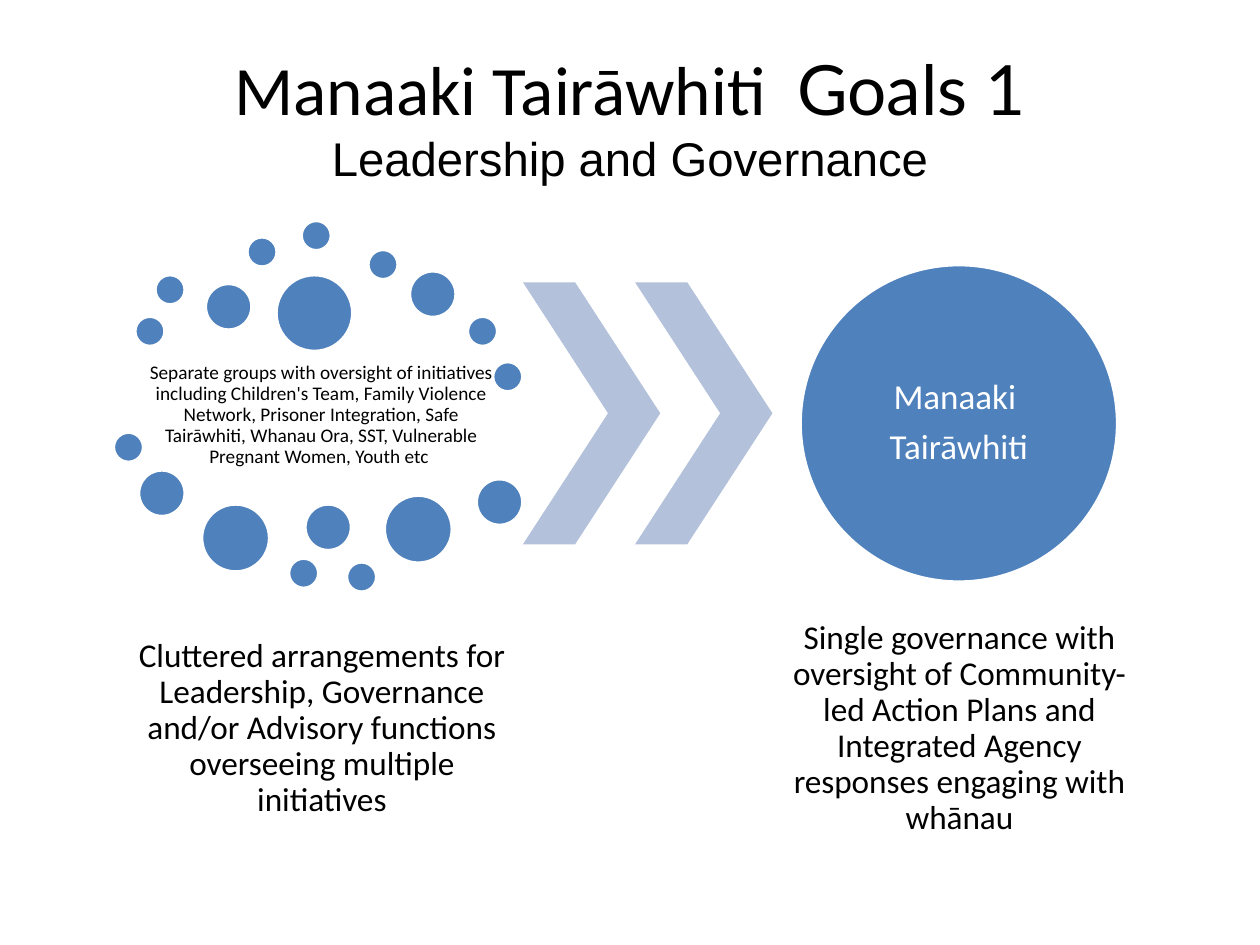
import pptx
from pptx.dml.color import RGBColor
from pptx.enum.shapes import MSO_SHAPE
from pptx.enum.text import MSO_ANCHOR, MSO_AUTO_SIZE, PP_ALIGN
from pptx.util import Inches, Pt

BLACK = RGBColor(0x00, 0x00, 0x00)
WHITE = RGBColor(0xFF, 0xFF, 0xFF)
BLUE = RGBColor(0x4F, 0x81, 0xBD)
PALE_BLUE = RGBColor(0xB3, 0xC1, 0xDB)

TITLE_RUNS = [
    ("Manaaki Tairāwhiti  ", "Calibri", 39.6),
    ("Goals 1", "Lato", 39.6),
    ("Leadership and Governance", "Arial", 27),
]

# Circle diameter: (left, top) of each circle
CIRCLES = {
    0.24: [(1.07, 2.51), (1.23, 2.18), (1.96, 1.88), (2.39, 1.75), (2.92, 1.98),
           (3.71, 2.51), (3.91, 2.87), (0.9, 3.43), (2.29, 4.43), (2.75, 4.46)],
    0.37: [(1.63, 2.25), (3.25, 2.15), (1.1, 3.73), (2.42, 4), (3.78, 3.8)],
    0.54: [(1.6, 4), (3.05, 3.93)],
    0.61: [(2.19, 2.18)],
    2.52: [(6.35, 2.1)],
}

CHEVRON_LEFTS = [4.15, 5.04]

# Paragraphs, (left, top, width, height), inset, size, colour
TEXTS = [
    (["Separate groups with oversight of initiatives including Children's Team, "
      "Family Violence Network, Prisoner Integration, Safe Tairāwhiti, Whanau Ora, "
      "SST, Vulnerable Pregnant Women, Youth etc "],
     (1.1, 2.75, 2.9, 1.09), 0.02, 11, BLACK),
    (["Cluttered arrangements for Leadership, Governance and/or Advisory functions "
      "overseeing multiple initiatives"],
     (1.07, 4.87, 2.97, 1.83), 0.03, 19, BLACK),
    (["Manaaki ", "Tairāwhiti"], (6.72, 2.47, 1.78, 1.78), 0, 20, WHITE),
    (["Single governance with oversight of Community-led Action Plans and "
      "Integrated Agency responses engaging with whānau"],
     (6.13, 4.87, 2.97, 1.83), 0.03, 19, BLACK),
]


def add_filled(s, kind, box, color):
    sp = s.shapes.add_shape(kind, *map(Inches, box))
    sp.shadow.inherit = False
    sp.fill.solid()
    sp.fill.fore_color.rgb = color
    sp.line.fill.background()
    return sp


def add_text(s, paragraphs, box, inset, size, color):
    tf = s.shapes.add_textbox(*map(Inches, box)).text_frame
    tf.word_wrap = True
    tf.vertical_anchor = MSO_ANCHOR.MIDDLE
    tf.margin_left = tf.margin_right = tf.margin_top = tf.margin_bottom = Inches(inset)
    tf.text = "\n".join(paragraphs)
    for p in tf.paragraphs:
        p.alignment = PP_ALIGN.CENTER
        p.line_spacing = 0.9
        p.space_after = Pt(0.35 * size)
        p.font.name = "Calibri"
        p.font.size = Pt(size)
        p.font.color.rgb = color


def fill_title(title):
    title.left, title.top, title.width, title.height = map(Inches, (0.5, 0.3, 9, 1.25))
    tf = title.text_frame
    tf.word_wrap = True
    tf.auto_size = MSO_AUTO_SIZE.NONE
    tf.vertical_anchor = MSO_ANCHOR.MIDDLE
    p = tf.paragraphs[0]
    p.alignment = PP_ALIGN.CENTER
    p.font.color.rgb = BLACK
    for text, font, size in TITLE_RUNS:
        if text == TITLE_RUNS[-1][0]:
            p.add_line_break()
        r = p.add_run()
        r.text = text
        r.font.name = font
        r.font.size = Pt(size)


def main():
    prs = pptx.Presentation()
    prs.slide_width, prs.slide_height = Inches(10), Inches(7.5)
    s = prs.slides.add_slide(prs.slide_layouts[5])
    fill_title(s.shapes.title)

    for diameter, corners in CIRCLES.items():
        for left, top in corners:
            sp = add_filled(s, MSO_SHAPE.OVAL, (left, top, diameter, diameter), BLUE)
            sp.line.color.rgb = WHITE
            sp.line.width = Pt(2)
    for left in CHEVRON_LEFTS:
        sp = add_filled(s, MSO_SHAPE.CHEVRON, (left, 2.24, 1.09, 2.08), PALE_BLUE)
        sp.adjustments[0] = 0.62
    for text in TEXTS:
        add_text(s, *text)

    prs.save("out.pptx")


if __name__ == "__main__":
    main()
